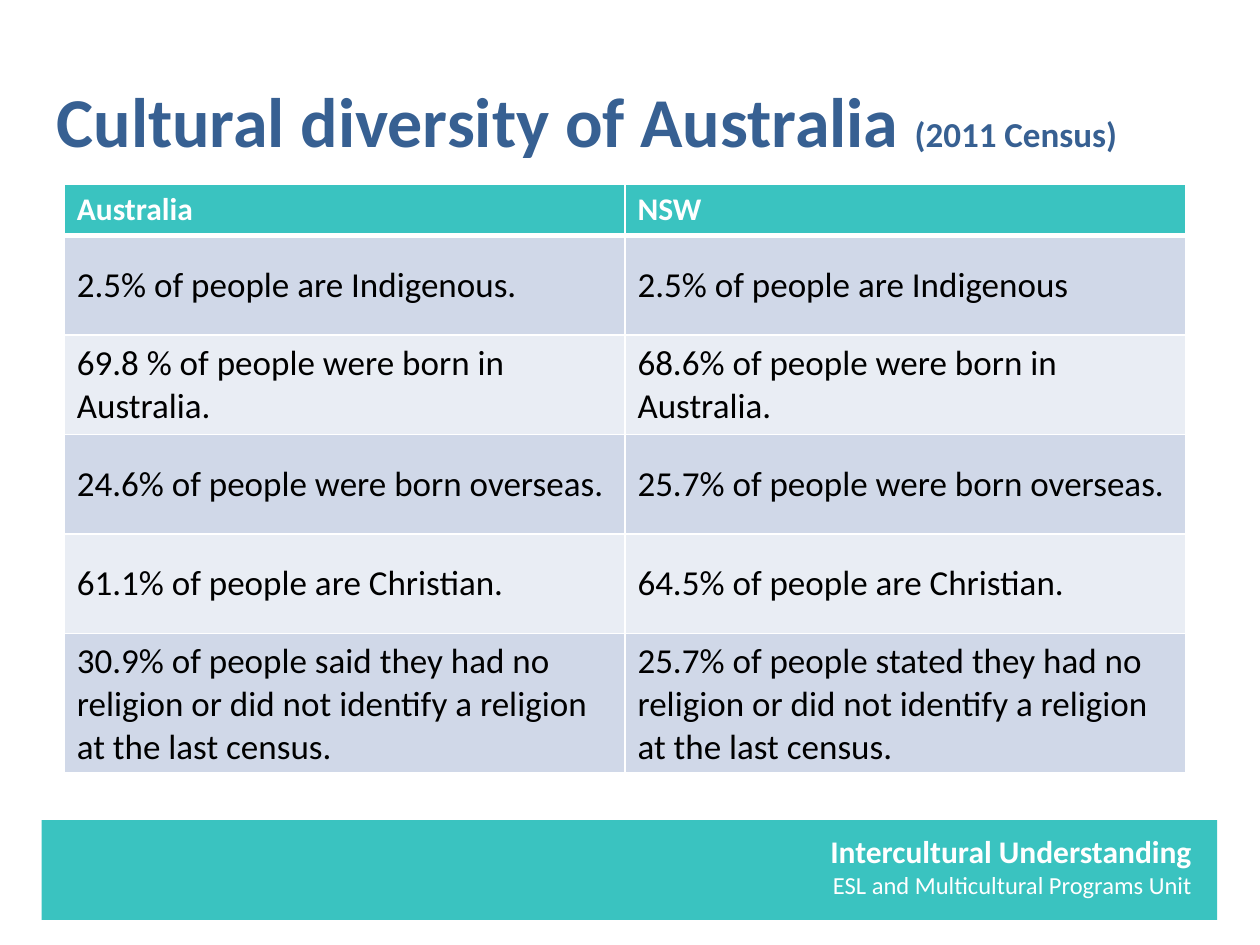
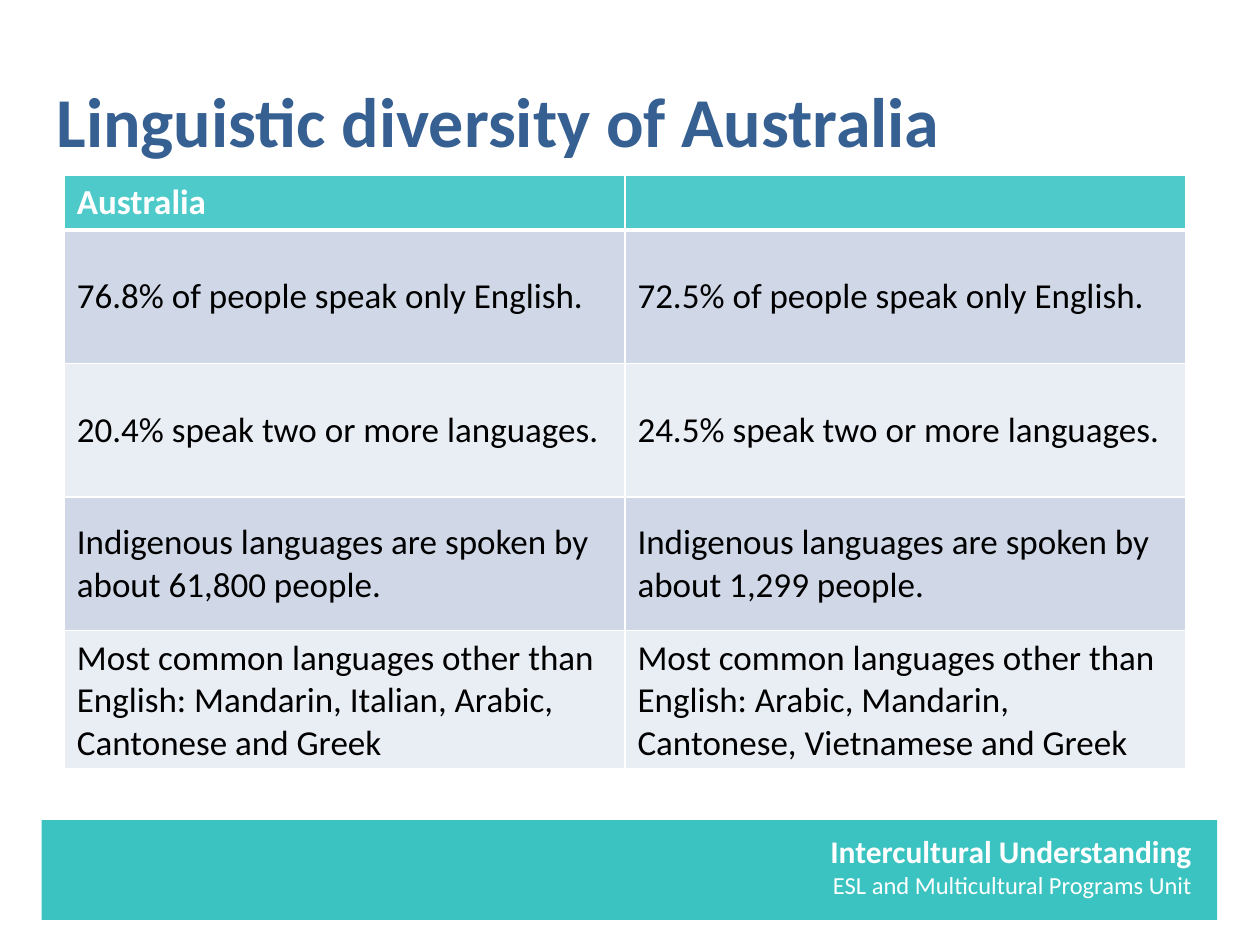
from dataclasses import dataclass

from lxml.etree import SubElement
from pptx import Presentation
from pptx.dml.color import RGBColor
from pptx.enum.shapes import MSO_SHAPE as Shape
from pptx.enum.text import MSO_ANCHOR as Anchor, PP_ALIGN as Align
from pptx.oxml.ns import qn
from pptx.util import Inches, Pt


@dataclass(frozen=True)
class Theme:
    font: str = "Calibri"
    title: str = "376092"
    band: str = "3AC3C0"
    light_band: str = "4ECACA"
    odd_row: str = "D0D8E8"
    even_row: str = "E9EDF4"
    white: str = "FFFFFF"
    black: str = "000000"
    title_size: int = 40
    body_size: int = 20
    heading_size: int = 18
    unit_size: int = 14


theme = Theme()


def write(paragraph, text, size=theme.body_size, color=theme.black, bold=False, align=Align.LEFT):
    paragraph.alignment = align
    run = paragraph.add_run()
    run.text = text
    run.font.name = theme.font
    run.font.size = Pt(size)
    run.font.bold = bold
    run.font.color.rgb = RGBColor.from_string(color)


def add_borders(cell, **widths):
    properties = cell._tc.get_or_add_tcPr()
    for side in "LRTB":
        line = SubElement(properties, qn(f"a:ln{side}"), w=str(Pt(widths.get(side, 1))))
        fill = SubElement(line, qn("a:solidFill"))
        SubElement(fill, qn("a:srgbClr"), val=theme.white)


pages = [
    {
        "title": "Cultural diversity of Australia ",
        "note": "(2011 Census)",
        "top": 1.46,
        "row_height": 0.79,
        "header_fill": theme.band,
        "header_size": theme.heading_size,
        "rows": [
            ("Australia", "NSW"),
            ("2.5% of people are Indigenous.", "2.5% of people are Indigenous"),
            ("69.8 % of people were born in Australia.", "68.6% of people were born in Australia."),
            ("24.6% of people were born overseas.", "25.7% of people were born overseas."),
            ("61.1% of people are Christian.", "64.5% of people are Christian."),
            (
                "30.9% of people said they had no religion or did not identify a religion at the last census.",
                "25.7% of people stated they had no religion or did not identify a religion at the last census.",
            ),
        ],
    },
    {
        "title": "Linguistic diversity of Australia",
        "note": "",
        "top": 1.39,
        "row_height": 1.06,
        "header_fill": theme.light_band,
        "header_size": theme.body_size,
        "rows": [
            ("Australia", ""),
            ("76.8% of people speak only English.", "72.5% of people speak only English."),
            ("20.4% speak two or more languages.", "24.5% speak two or more languages."),
            (
                "Indigenous languages are spoken by about 61,800 people.",
                "Indigenous languages are spoken by about 1,299 people.",
            ),
            (
                "Most common languages other than English: Mandarin, Italian, Arabic, Cantonese and Greek",
                "Most common languages other than English: Arabic, Mandarin, Cantonese, Vietnamese and Greek",
            ),
        ],
    },
]
header_height = 0.41

presentation = Presentation()
presentation.slide_width = Inches(10)
presentation.slide_height = Inches(7.5)

for page in pages:
    slide = presentation.slides.add_slide(presentation.slide_layouts[6])

    footer = slide.shapes.add_shape(Shape.RECTANGLE, Inches(0.33), Inches(6.51), Inches(9.33), Inches(0.79))
    footer.shadow.inherit = False
    footer.fill.solid()
    footer.fill.fore_color.rgb = RGBColor.from_string(theme.band)
    footer.line.fill.background()
    frame = footer.text_frame
    frame.word_wrap = True
    frame.vertical_anchor = Anchor.BOTTOM
    frame.margin_left = Inches(2.56)
    frame.margin_right = Inches(0.2)
    frame.margin_top = frame.margin_bottom = Inches(0.16)
    write(frame.paragraphs[0], "Intercultural Understanding",
          size=theme.heading_size, color=theme.white, bold=True, align=Align.RIGHT)
    write(frame.add_paragraph(), "ESL and Multicultural Programs Unit",
          size=theme.unit_size, color=theme.white, align=Align.RIGHT)

    title = slide.shapes.add_textbox(Inches(0.35), Inches(0.54), Inches(9.29), Inches(0.81))
    title.text_frame.word_wrap = True
    title.text_frame.vertical_anchor = Anchor.MIDDLE
    heading = title.text_frame.paragraphs[0]
    write(heading, page["title"], size=theme.title_size, color=theme.title, bold=True)
    if page["note"]:
        write(heading, page["note"], color=theme.title, bold=True)

    rows = page["rows"]
    table_height = header_height + page["row_height"] * (len(rows) - 1)
    table = slide.shapes.add_table(
        len(rows), 2, Inches(0.51), Inches(page["top"]), Inches(8.9), Inches(table_height)
    ).table
    for column in table.columns:
        column.width = Inches(4.45)

    for row_index, texts in enumerate(rows):
        is_header = row_index == 0
        table.rows[row_index].height = Inches(header_height if is_header else page["row_height"])
        row_fill = theme.odd_row if row_index % 2 else theme.even_row
        for column_index, text in enumerate(texts):
            cell = table.cell(row_index, column_index)
            add_borders(cell, T=3 if row_index == 1 else 1, B=3 if is_header else 1)
            cell.fill.solid()
            cell.fill.fore_color.rgb = RGBColor.from_string(page["header_fill"] if is_header else row_fill)
            cell.vertical_anchor = Anchor.TOP if is_header else Anchor.MIDDLE
            paragraph = cell.text_frame.paragraphs[0]
            if is_header and text:
                write(paragraph, text, size=page["header_size"], color=theme.white, bold=True)
            elif text:
                write(paragraph, text)

presentation.save("out.pptx")
